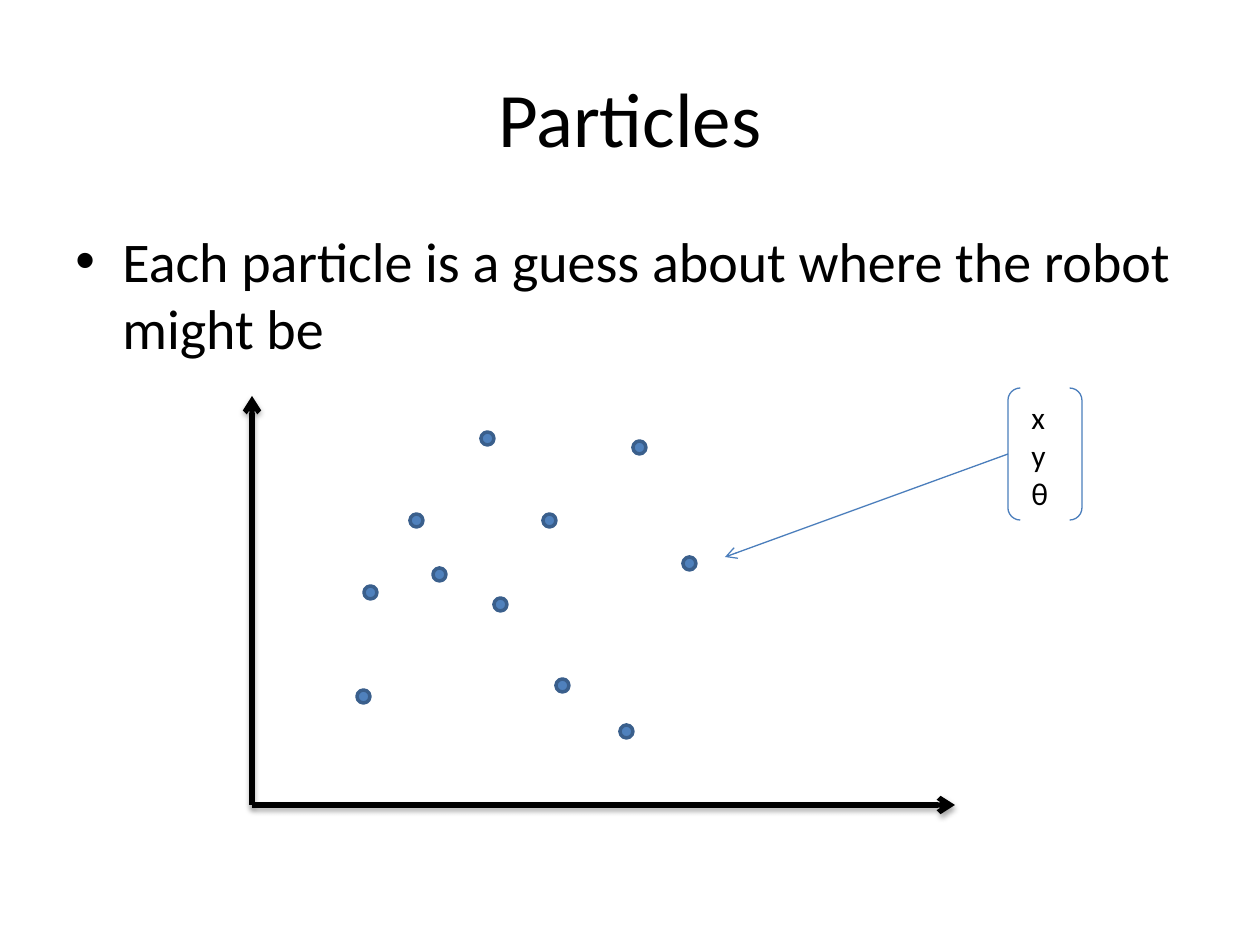
from lxml import etree
from pptx import Presentation
from pptx.dml.color import RGBColor
from pptx.enum.shapes import MSO_CONNECTOR, MSO_SHAPE
from pptx.enum.text import MSO_ANCHOR, MSO_AUTO_SIZE, PP_ALIGN
from pptx.oxml.ns import qn
from pptx.util import Pt

STRAIGHT = MSO_CONNECTOR.STRAIGHT
ELLIPSE = MSO_SHAPE.OVAL
BRACKETS = MSO_SHAPE.DOUBLE_BRACKET
MIDDLE, TOP = MSO_ANCHOR.MIDDLE, MSO_ANCHOR.TOP
CENTER, LEFT = PP_ALIGN.CENTER, PP_ALIGN.LEFT
FIT_SHAPE = MSO_AUTO_SIZE.SHAPE_TO_FIT_TEXT
NO_FIT = MSO_AUTO_SIZE.NONE

FONT = "Calibri"
COLORS = {
    "text": "000000",
    "axis": "000000",
    "particle": "4F81BD",
    "particle_edge": "3A5F8C",
    "pose": "4B7EBC",
}
PARTICLE_SIZE = 13
PARTICLES = [
    (158, 118), (181, 172), (229, 36), (112, 190), (242, 202), (431, 161),
    (105, 294), (291, 118), (381, 45), (304, 283), (368, 329),
]


def px(value):
    return round(value * 914400 / 126)


def color(name):
    return RGBColor.from_string(COLORS[name])


def write_text(shape, lines, size, align=LEFT, anchor=TOP, wrap=True, fit=NO_FIT):
    frame = shape.text_frame
    frame.word_wrap = wrap
    frame.auto_size = fit
    frame.vertical_anchor = anchor
    for index, line in enumerate(lines):
        para = frame.paragraphs[0] if index == 0 else frame.add_paragraph()
        para.alignment = align
        span = para.add_run()
        span.text = line
        span.font.name = FONT
        span.font.size = Pt(size)
        span.font.color.rgb = color("text")
    return frame


def add_bullet(para, indent):
    properties = para._p.get_or_add_pPr()
    properties.set("marL", str(px(indent)))
    properties.set("indent", str(px(-indent)))
    etree.SubElement(properties, qn("a:buFont"), typeface="Arial")
    etree.SubElement(properties, qn("a:buChar"), char="•")


def add_arrow(shapes, start, end, line_color, width, shadow=False):
    arrow = shapes.add_connector(STRAIGHT, *(px(value) for value in (*start, *end)))
    arrow.line.color.rgb = color(line_color)
    arrow.line.width = Pt(width)
    etree.SubElement(arrow.line._get_or_add_ln(), qn("a:tailEnd"), type="arrow")
    effects = etree.SubElement(arrow._element.spPr, qn("a:effectLst"))
    if shadow:
        outer = etree.SubElement(
            effects, qn("a:outerShdw"), blurRad=str(Pt(3.1)), dist=str(Pt(1.8)),
            dir="5400000", rotWithShape="0")
        tint = etree.SubElement(outer, qn("a:srgbClr"), val=COLORS["axis"])
        etree.SubElement(tint, qn("a:alpha"), val="35000")
    return arrow


def place_title(page, left, top, width, height):
    title = page.shapes.title
    title.left, title.top = px(left), px(top)
    title.width, title.height = px(width), px(height)
    write_text(title, ["Particles"], 44, align=CENTER, anchor=MIDDLE)


def place_body(page, left, top, width, height):
    box = page.shapes.add_textbox(px(left), px(top), px(width), px(height))
    frame = write_text(
        box, ["Each particle is a guess about where the robot might be"], 32)
    para = frame.paragraphs[0]
    para.space_before = Pt(6.4)
    add_bullet(para, 47)


def place_plot(page, left, top, width, height):
    plot = page.shapes.add_group_shape()
    origin = (left, top + height)
    for end in ((left, top), (left + width, top + height)):
        add_arrow(plot.shapes, origin, end, "axis", 3, shadow=True)
    for across, down in PARTICLES:
        particle = plot.shapes.add_shape(
            ELLIPSE, px(left + across), px(top + down),
            px(PARTICLE_SIZE), px(PARTICLE_SIZE))
        particle.shadow.inherit = False
        particle.fill.solid()
        particle.fill.fore_color.rgb = color("particle")
        particle.line.color.rgb = color("particle_edge")
        particle.line.width = Pt(2)


def place_pose(page, left, top, width, height, target):
    brackets = page.shapes.add_shape(BRACKETS, px(left), px(top), px(width), px(height))
    brackets.shadow.inherit = False
    brackets.fill.background()
    brackets.line.color.rgb = color("pose")
    brackets.line.width = Pt(0.75)
    pointer = add_arrow(page.shapes, (left, top + height / 2), target, "pose", 0.75)
    pointer.begin_connect(brackets, 1)
    label = page.shapes.add_textbox(px(left + 11), px(top + 4), px(43), px(127))
    write_text(label, ["x", "y", "θ"], 18, wrap=False, fit=FIT_SHAPE)


def main():
    deck = Presentation()
    deck.slide_width, deck.slide_height = px(1260), px(945)
    page = deck.slides.add_slide(deck.slide_layouts[5])
    place_title(page, 63, 38, 1134, 157)
    place_body(page, 63, 220, 1134, 624)
    place_plot(page, 252, 396, 703, 409)
    place_pose(page, 1008, 388, 74, 132, target=(725, 557))
    deck.save("out.pptx")


if __name__ == "__main__":
    main()
